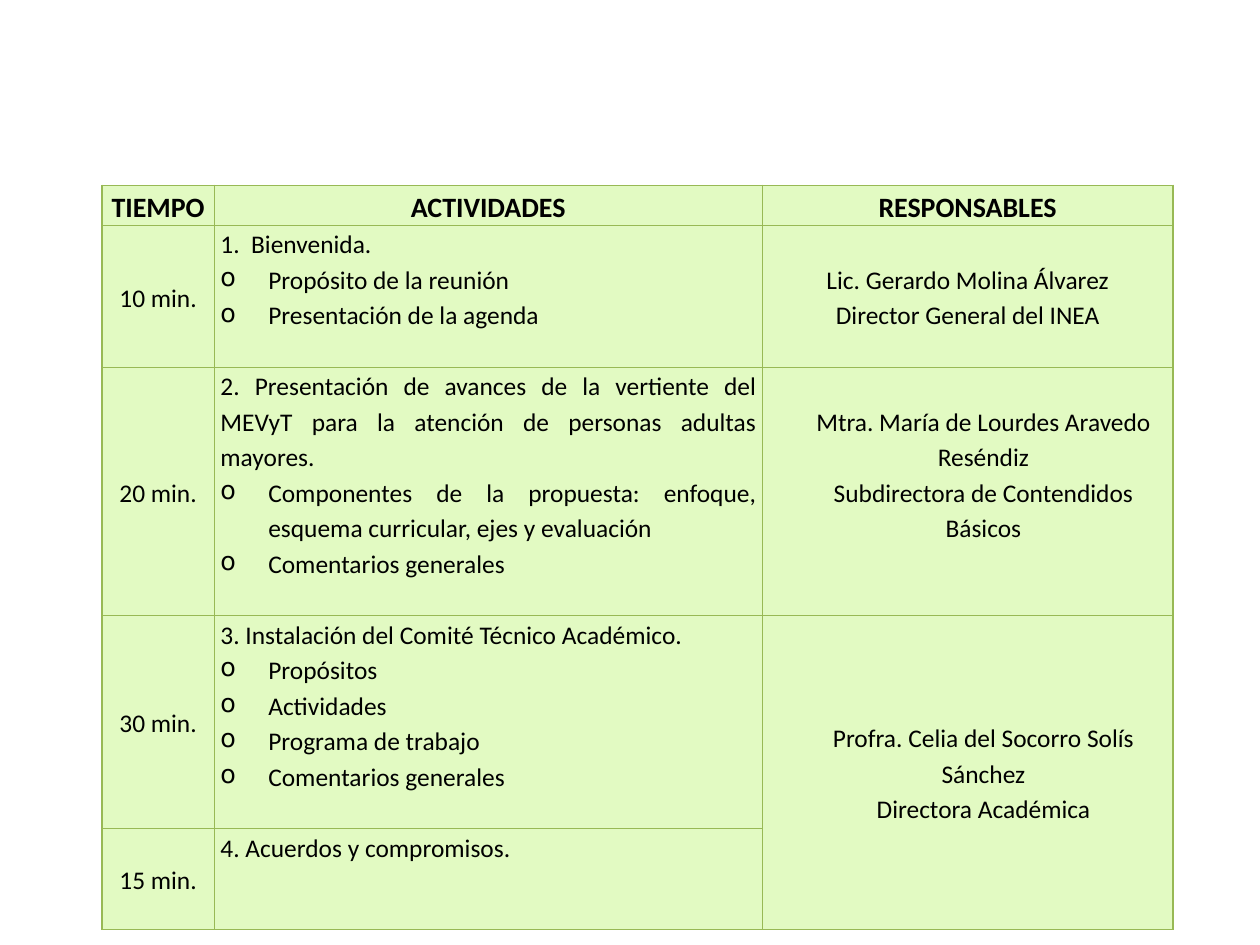
from lxml import etree
from pptx import Presentation
from pptx.dml.color import RGBColor
from pptx.enum import text as tx
from pptx.oxml.ns import qn
from pptx.util import Emu, Inches, Pt

HUES = {"ink": "000000", "fill": "E2FAC2", "line": "98B955"}
FONT = "Calibri"
LEFT, MID, BOTH = tx.PP_ALIGN.LEFT, tx.PP_ALIGN.CENTER, tx.PP_ALIGN.JUSTIFY

# Column and row sizes, in hundredths of the slide's width and height
COLS = [8.9, 43.5, 32.6]
ROWS = [4.23, 15.03, 26.27, 22.53, 10.67]

HEADS = ["TIEMPO", "ACTIVIDADES", "RESPONSABLES"]
# Time, task, points of the task
TASKS = [
    ("10 min.", "1.\u00a0 Bienvenida.",
     ["Propósito de la reunión", "Presentación de la agenda"]),
    ("20 min.", "2. Presentación de avances de la vertiente del MEVyT "
     "para la atención de personas adultas mayores.",
     ["Componentes de la propuesta: enfoque, esquema curricular, ejes y evaluación",
      "Comentarios generales"]),
    ("30 min.", "3. Instalación del Comité Técnico Académico.",
     ["Propósitos", "Actividades", "Programa de trabajo", "Comentarios generales"]),
    ("15 min.", "4. Acuerdos y compromisos.", []),
]
# Name and post, left indent, space kept free below (inches)
HOSTS = [
    (["Lic. Gerardo Molina Álvarez", "Director General del INEA"], 0, 0),
    (["Mtra. María de Lourdes Aravedo Reséndiz",
      "Subdirectora de Contendidos Básicos"], 0.25, 0.28),
    (["Profra. Celia del Socorro Solís Sánchez", "Directora Académica"], 0.25, 0),
]


def write(cell, words, align=MID, size=14.5, bold=False, dent=0, dot=False,
          first=True):
    """Add one paragraph to a cell."""
    frame = cell.text_frame
    para = frame.paragraphs[0] if first else frame.add_paragraph()
    para.alignment, para.line_spacing = align, 1.15
    props = para._p.get_or_add_pPr()
    props.set("marL", str(Inches(dent)))
    props.set("indent", str(-Inches(dent) if dot else 0))
    if dot:
        etree.SubElement(props, qn("a:buChar")).set("char", "o")
    run = para.add_run()
    run.text = words
    run.font.name, run.font.size, run.font.bold = FONT, Pt(size), bold
    run.font.color.rgb = RGBColor.from_string(HUES["ink"])


def dress(cell):
    """Set a cell's margins, fill and borders."""
    cell.margin_left = cell.margin_right = Inches(0.05)
    cell.margin_top = cell.margin_bottom = 0
    cell.vertical_anchor = tx.MSO_ANCHOR.MIDDLE
    cell.fill.solid()
    cell.fill.fore_color.rgb = RGBColor.from_string(HUES["fill"])
    props = cell._tc.get_or_add_tcPr()
    for spot, side in enumerate("LRTB"):
        line = etree.Element(qn("a:ln" + side), w=str(Pt(0.75)))
        paint = etree.SubElement(line, qn("a:solidFill"))
        etree.SubElement(paint, qn("a:srgbClr")).set("val", HUES["line"])
        props.insert(spot, line)


def draw_plan(slide, box):
    """Place the agenda table in the box."""
    x, y, wide, high = box
    grid = slide.shapes.add_table(len(ROWS), len(COLS), x, y, wide, high).table
    for col, part in zip(grid.columns, COLS):
        col.width = Emu(round(wide * part / sum(COLS)))
    for row, part in zip(grid.rows, ROWS):
        row.height = Emu(round(high * part / sum(ROWS)))
    for cell in grid.iter_cells():
        dress(cell)

    # Head row
    for n, head in enumerate(HEADS):
        write(grid.cell(0, n), head, size=16, bold=True)

    # Times and tasks
    for n, (time, task, points) in enumerate(TASKS, 1):
        write(grid.cell(n, 0), time)
        cell = grid.cell(n, 1)
        cell.vertical_anchor = tx.MSO_ANCHOR.TOP
        write(cell, task, align=BOTH)
        for point in points:
            write(cell, point, align=BOTH, dent=0.38, dot=True, first=False)

    # Hosts: the last one leads two tasks
    grid.cell(3, 2).merge(grid.cell(4, 2))
    for n, (lines, dent, gap) in enumerate(HOSTS, 1):
        cell = grid.cell(n, 2)
        cell.margin_bottom = Inches(gap)
        for k, line in enumerate(lines):
            write(cell, line, dent=dent, first=k == 0)


def main():
    deck = Presentation()
    deck.slide_width, deck.slide_height = Inches(10), Inches(7.5)
    slide = deck.slides.add_slide(deck.slide_layouts[6])
    col, row = deck.slide_width / 100, deck.slide_height / 100
    box = (8.1 * col, 19.6 * row, sum(COLS) * col, sum(ROWS) * row)
    draw_plan(slide, [Emu(round(side)) for side in box])
    deck.save("out.pptx")


if __name__ == "__main__":
    main()
